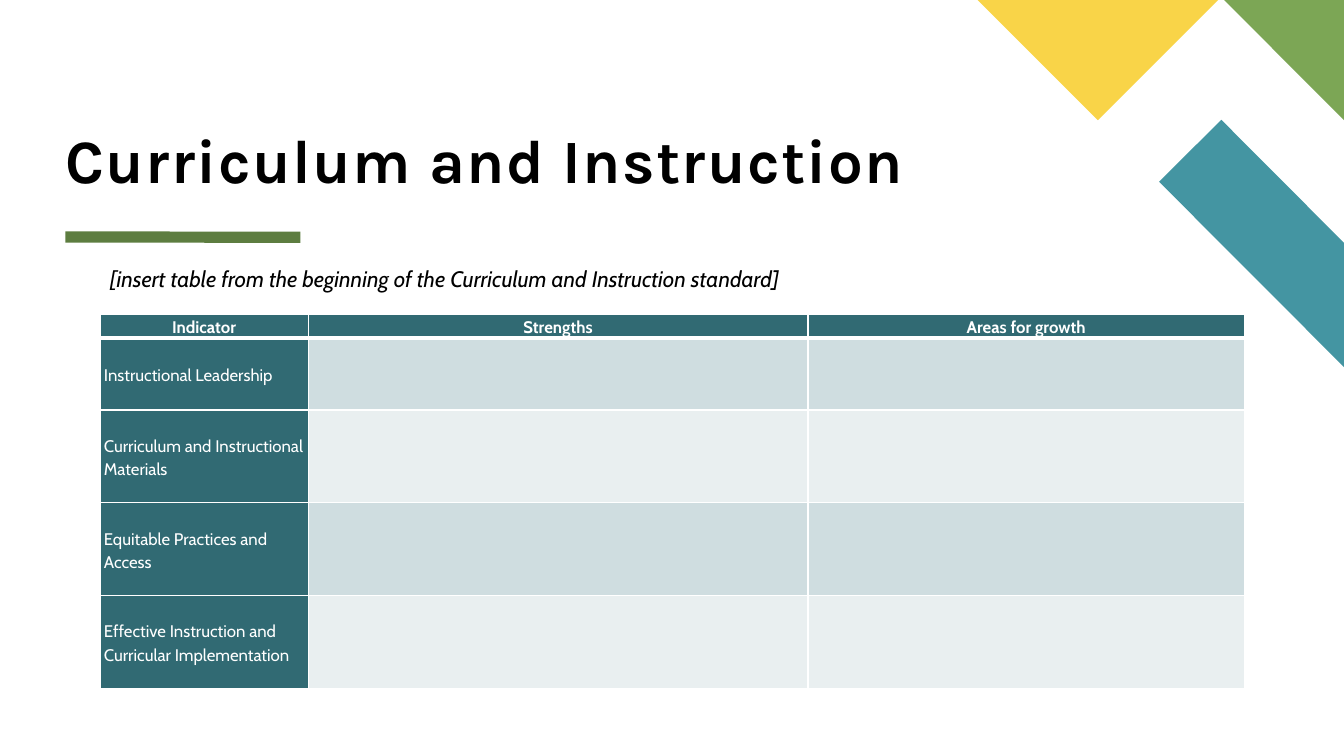
from lxml import etree
from pptx import Presentation
from pptx.dml.color import RGBColor
from pptx.enum.shapes import MSO_CONNECTOR
from pptx.enum.text import MSO_ANCHOR, MSO_AUTO_SIZE, PP_ALIGN
from pptx.oxml.ns import qn
from pptx.util import Cm, Pt

TITLE = "Curriculum and Instruction"
PROMPT = "[insert table from the beginning of the Curriculum and Instruction standard]"
ROWS = [
    ("Indicator", "Strengths", "Areas for growth"),
    ("Instructional Leadership", "", ""),
    ("Curriculum and Instructional Materials", "", ""),
    ("Equitable Practices and Access", "", ""),
    ("Effective Instruction and Curricular Implementation", "", ""),
]
COLORS = {
    "black": "000000", "white": "FFFFFF", "header": "316A73",
    "odd": "CFDDE0", "even": "E9EFF0", "rule": "5D7D40",
    "teal": "4495A2", "green": "7CA655", "yellow": "F9D448",
}
CORNER_SHAPES = [
    ("teal", [(33.87, 9.25), (33.87, 6.12), (30.78, 3.02), (29.21, 4.58)]),
    ("green", [(33.87, 3.03), (33.87, 0), (30.85, 0)]),
    ("yellow", [(24.64, 0), (27.67, 3.03), (30.7, 0)]),
]
COLUMN_WIDTHS = [5.25, 12.59, 11]
ROW_HEIGHTS = [0.61, 1.81, 2.34, 2.34, 2.34]
MARGIN = 1.65
LEFT, CENTER = PP_ALIGN.LEFT, PP_ALIGN.CENTER
TOP, MIDDLE, BOTTOM = MSO_ANCHOR.TOP, MSO_ANCHOR.MIDDLE, MSO_ANCHOR.BOTTOM


def rgb(name):
    return RGBColor.from_string(COLORS[name])


def style_text(paragraph, font_name, size, color, bold=False, italic=False):
    for run in paragraph.runs:
        font = run.font
        font.name, font.size = font_name, Pt(size)
        font.bold, font.italic = bold, italic
        font.color.rgb = rgb(color)


def set_insets(frame, left, top, right, bottom):
    frame.margin_left, frame.margin_top = Cm(left), Cm(top)
    frame.margin_right, frame.margin_bottom = Cm(right), Cm(bottom)


def add_corner_shape(slide, color, points):
    corners = [(Cm(x), Cm(y)) for x, y in points]
    builder = slide.shapes.build_freeform(*corners[0])
    builder.add_line_segments(corners[1:], close=True)
    shape = builder.convert_to_shape()
    shape.shadow.inherit = False
    shape.fill.solid()
    shape.fill.fore_color.rgb = rgb(color)
    shape.line.fill.background()


def add_title(slide):
    title = slide.shapes.title
    title.left, title.top = Cm(MARGIN), Cm(0.56)
    title.width, title.height = Cm(30.48), Cm(4.37)
    frame = title.text_frame
    frame.text = TITLE
    frame.word_wrap = True
    frame.auto_size = MSO_AUTO_SIZE.NONE
    frame.vertical_anchor = BOTTOM
    set_insets(frame, 0, 0, 0, 0)
    paragraph = frame.paragraphs[0]
    paragraph.alignment = LEFT
    paragraph.line_spacing = 0.8
    style_text(paragraph, "Karla", 44, "black", bold=True)
    paragraph.runs[0].font._element.set("spc", "100")


def add_rule(slide):
    rule = slide.shapes.add_connector(
        MSO_CONNECTOR.STRAIGHT, Cm(MARGIN), Cm(5.97), Cm(7.57), Cm(5.98))
    rule.line.color.rgb = rgb("rule")
    rule.line.width = Pt(8)
    etree.SubElement(rule._element.spPr, qn("a:effectLst"))


def add_prompt(slide):
    box = slide.shapes.add_textbox(Cm(MARGIN), Cm(6.55), Cm(30.48), Cm(1.35))
    frame = box.text_frame
    frame.text = PROMPT
    frame.word_wrap = True
    set_insets(frame, 1.12, 0.13, 0.25, 0.13)
    paragraph = frame.paragraphs[0]
    paragraph.space_before = Pt(6)
    style_text(paragraph, "Cabin", 16, "black", italic=True)


def set_borders(cell, widths):
    properties = cell._tc.get_or_add_tcPr()
    for index, (side, width) in enumerate(widths.items()):
        line = etree.Element(qn("a:ln" + side), w=str(Pt(width)))
        fill = etree.SubElement(line, qn("a:solidFill"))
        etree.SubElement(fill, qn("a:srgbClr"), val=COLORS["white"])
        properties.insert(index, line)


def format_cell(cell, text, row, column):
    is_header = row == 0
    band = "odd" if row % 2 else "even"
    cell.fill.solid()
    cell.fill.fore_color.rgb = rgb("header" if is_header or column == 0 else band)
    set_borders(cell, {"L": 1, "R": 1, "T": 3 if row == 1 else 1, "B": 3 if is_header else 1})
    if not text:
        return
    cell.text_frame.text = text
    set_insets(cell, 0.1, 0, 0.1, 0)
    cell.vertical_anchor = TOP if is_header else MIDDLE
    paragraph = cell.text_frame.paragraphs[0]
    paragraph.alignment = CENTER if is_header else LEFT
    paragraph.line_spacing = 1.15
    paragraph.space_before = paragraph.space_after = Pt(2)
    style_text(paragraph, "Cabin", 12, "white", bold=is_header)


def add_indicator_table(slide):
    table = slide.shapes.add_table(
        len(ROWS), len(COLUMN_WIDTHS), Cm(2.52), Cm(7.91),
        Cm(sum(COLUMN_WIDTHS)), Cm(sum(ROW_HEIGHTS))).table
    table.horz_banding = False
    for column, width in zip(table.columns, COLUMN_WIDTHS):
        column.width = Cm(width)
    for row, height in zip(table.rows, ROW_HEIGHTS):
        row.height = Cm(height)
    for row, texts in enumerate(ROWS):
        for column, text in enumerate(texts):
            format_cell(table.cell(row, column), text, row, column)


def main():
    presentation = Presentation()
    presentation.slide_width, presentation.slide_height = Cm(33.87), Cm(19.05)
    slide = presentation.slides.add_slide(presentation.slide_layouts[5])
    for color, points in CORNER_SHAPES:
        add_corner_shape(slide, color, points)
    add_title(slide)
    add_rule(slide)
    add_prompt(slide)
    add_indicator_table(slide)
    presentation.save("out.pptx")


if __name__ == "__main__":
    main()
